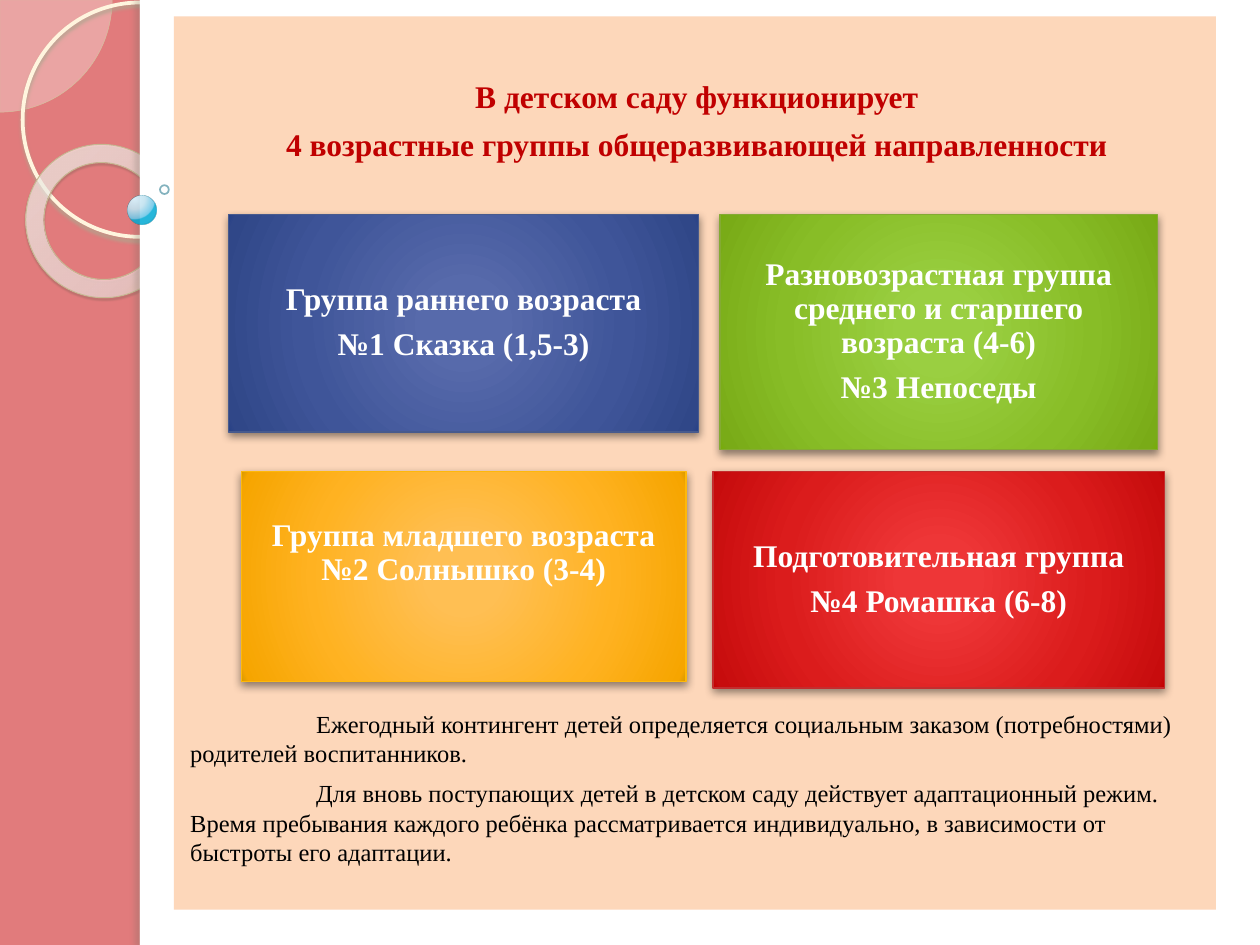
from dataclasses import dataclass

from lxml import etree
from pptx import Presentation
from pptx import util as u
from pptx.dml.color import RGBColor
from pptx.enum import shapes, text
from pptx.oxml.ns import qn

KIND = shapes.MSO_SHAPE


@dataclass(frozen=True)
class Theme:
    font: str = "Times New Roman"
    heading_size: int = 18
    note_size: int = 14
    side: str = "E17B7C"
    page: str = "FFFFFF"
    panel: str = "FDD7BA"
    heading: str = "C00000"
    note: str = "000000"
    card_text: str = "FFFFFF"
    # Gradient stops: position, colour, opacity (all in percent)
    blue: tuple = ((0, "576BAC"), (15, "576AAB"), (62, "3F5599"), (97, "304788"), (100, "264086"))
    green: tuple = ((0, "9AD041"), (15, "9ACF41"), (62, "88BD27"), (97, "79AB17"), (100, "77AC08"))
    amber: tuple = ((0, "FFBF54"), (15, "FFBF53"), (62, "FFB221"), (97, "F6A500"), (100, "D69900"))
    red: tuple = ((0, "EF3737"), (15, "EE3637"), (62, "DB1C1C"), (97, "C70C0D"), (100, "C30001"))
    ring: tuple = ((0, "FFFCF6", 70), (70, "FFFEFB", 55), (100, "F0D28E", 60))
    bubble: tuple = ((0, "DAF4FF", 95), (50, "C3E3F0", 90), (95, "6BC7E8", 88), (100, "00ABD5", 85))
    # Shadows: colour, opacity, blur, distance, direction
    card_shadow: tuple = ("000000", 43, 5, 2, 90)
    circle_shadow: tuple = ("B0A68F", 85, 2, 2, 90)
    ring_shadow: tuple = ("5A5444", 35, 1, 1.2, 75)
    edge_shadow: tuple = ("736F63", 25, 3, 3, 180)


THEME = Theme()
WIDTH, HEIGHT = 10, 7.5
PAGE_LEFT = 1.11
COLUMN_CENTRES = (3.68, 7.45)
ROW_TOPS = (1.7, 3.74)


def add_color(parent, rgb, opacity=100):
    color = etree.SubElement(parent, qn("a:srgbClr"), val=rgb)
    if opacity < 100:
        etree.SubElement(color, qn("a:alpha"), val=str(opacity * 1000))


def fill_radial(shape, stops, focus):
    """Circular gradient; focus is left, top, right, bottom in percent."""
    shape.fill.background()
    props = shape._element.spPr
    gradient = etree.Element(qn("a:gradFill"), rotWithShape="1")
    stop_list = etree.SubElement(gradient, qn("a:gsLst"))
    for position, *color in stops:
        stop = etree.SubElement(stop_list, qn("a:gs"), pos=str(position * 1000))
        add_color(stop, *color)
    circle = etree.SubElement(gradient, qn("a:path"), path="circle")
    sides = {side: str(share * 1000) for side, share in zip("ltrb", focus)}
    etree.SubElement(circle, qn("a:fillToRect"), **sides)
    props.replace(props.find(qn("a:noFill")), gradient)


def add_shadow(shape, rgb, opacity, blur, distance, direction):
    effects = shape._element.spPr.find(qn("a:effectLst"))
    outer = etree.SubElement(
        effects, qn("a:outerShdw"), blurRad=str(u.Pt(blur)), dist=str(u.Pt(distance)),
        dir=str(direction * 60000), algn="tl", rotWithShape="0")
    add_color(outer, rgb, opacity)


def set_opacity(fill_parent, opacity):
    color = fill_parent.find(qn("a:solidFill")).find(qn("a:srgbClr"))
    etree.SubElement(color, qn("a:alpha"), val=str(opacity * 1000))


def add_figure(slide, kind, box, fill=None, focus=(50, 50, 50, 50), opacity=100,
               line=None, line_opacity=100, shadow=None):
    """Preset shape; fill is a colour or gradient stops, line is (colour, points)."""
    shape = slide.shapes.add_shape(kind, *(u.Inches(length) for length in box))
    shape.shadow.inherit = False
    if fill is None:
        shape.fill.background()
    elif isinstance(fill, str):
        shape.fill.solid()
        shape.fill.fore_color.rgb = RGBColor.from_string(fill)
        if opacity < 100:
            set_opacity(shape._element.spPr, opacity)
    else:
        fill_radial(shape, fill, focus)
    if line:
        shape.line.color.rgb = RGBColor.from_string(line[0])
        shape.line.width = u.Pt(line[1])
        if line_opacity < 100:
            set_opacity(shape._element.spPr.find(qn("a:ln")), line_opacity)
    else:
        shape.line.fill.background()
    if shadow:
        add_shadow(shape, *shadow)
    return shape


def set_insets(frame, left, top, right, bottom):
    frame.margin_left, frame.margin_top = u.Inches(left), u.Inches(top)
    frame.margin_right, frame.margin_bottom = u.Inches(right), u.Inches(bottom)
    frame.word_wrap = True


def style_paragraph(paragraph, size, rgb, bold, align):
    paragraph.alignment = align
    for run in paragraph.runs:
        run.font.name, run.font.size, run.font.bold = THEME.font, u.Pt(size), bold
        run.font.color.rgb = RGBColor.from_string(rgb)


def add_side_decoration(slide):
    # Quarter disc and rings, partly covered by the white page
    radius = 0.89
    disc = add_figure(slide, KIND.PIE, (-radius, -radius, 2 * radius, 2 * radius),
                      "FEFAF4", opacity=33, line=("D3C39F", 0.25))
    disc.adjustments[0], disc.adjustments[1] = 0, 54.02
    add_figure(slide, KIND.OVAL, (0.18, 0.02, 1.86, 1.86), line=("FFF5DE", 2.15),
               shadow=THEME.circle_shadow)
    ring = add_figure(slide, KIND.DONUT, (0.2, 1.15, 1.23, 1.21), THEME.ring,
                      (-408, -50, 508, 150), line=("C7B893", 0.58), shadow=THEME.ring_shadow)
    ring.adjustments[0] = 0.12
    ring.rotation = 38.6

    # White page with its shaded left edge
    add_figure(slide, KIND.RECTANGLE, (PAGE_LEFT, 0, WIDTH - PAGE_LEFT, HEIGHT), THEME.page)
    add_figure(slide, KIND.RECTANGLE, (PAGE_LEFT, 0, 0.08, HEIGHT), THEME.page,
               shadow=THEME.edge_shadow)

    # Bubbles on the edge
    add_figure(slide, KIND.OVAL, (1.01, 1.55, 0.23, 0.23), THEME.bubble, (25, 12, 75, 88),
               line=("308EA5", 0.16), line_opacity=60)
    add_figure(slide, KIND.OVAL, (1.27, 1.47, 0.07, 0.07), line=("318093", 1), line_opacity=60)


def add_panel(slide, headings, notes):
    """Panel with a heading above the cards and notes below them."""
    panel = add_figure(slide, KIND.RECTANGLE, (1.38, 0.13, 8.27, 7.09), THEME.panel)
    frame = panel.text_frame
    set_insets(frame, 0.13, 0.48, 0.1, 0.05)
    frame.vertical_anchor = text.MSO_ANCHOR.TOP
    frame.text = "\n".join(headings + notes)
    for index, paragraph in enumerate(frame.paragraphs):
        paragraph.space_before = u.Pt(6 if index else 0)
        if index < len(headings):
            style_paragraph(paragraph, THEME.heading_size, THEME.heading, True, text.PP_ALIGN.CENTER)
        else:
            style_paragraph(paragraph, THEME.note_size, THEME.note, False, text.PP_ALIGN.LEFT)
            paragraph._p.get_or_add_pPr().set("indent", str(u.Inches(1)))
    # Room for the cards
    frame.paragraphs[len(headings)].space_before = u.Pt(312)


def add_card(slide, column, row, size, stops, line, lines, bottom_inset=0.07):
    width, height = size
    left = COLUMN_CENTRES[column] - width / 2
    card = add_figure(slide, KIND.RECTANGLE, (left, ROW_TOPS[row], width, height), stops,
                      line=(line, 0.75), shadow=THEME.card_shadow)
    frame = card.text_frame
    set_insets(frame, 0.07, 0.07, 0.07, bottom_inset)
    frame.vertical_anchor = text.MSO_ANCHOR.MIDDLE
    frame.text = "\n".join(lines)
    for paragraph in frame.paragraphs:
        paragraph.line_spacing, paragraph.space_after = 0.9, u.Pt(6.3)
        style_paragraph(paragraph, THEME.heading_size, THEME.card_text, True, text.PP_ALIGN.CENTER)


def main():
    deck = Presentation()
    deck.slide_width, deck.slide_height = u.Inches(WIDTH), u.Inches(HEIGHT)
    slide = deck.slides.add_slide(deck.slide_layouts[6])
    slide.background.fill.solid()
    slide.background.fill.fore_color.rgb = RGBColor.from_string(THEME.side)

    add_side_decoration(slide)
    add_panel(
        slide,
        ["В детском саду функционирует", "4 возрастные группы общеразвивающей направленности"],
        ["Ежегодный контингент детей определяется социальным заказом (потребностями) "
         "родителей воспитанников.",
         "Для вновь поступающих детей в детском саду действует адаптационный режим. "
         "Время пребывания каждого ребёнка рассматривается индивидуально, в зависимости "
         "от быстроты его адаптации."])

    # Age groups
    add_card(slide, 0, 0, (3.73, 1.73), THEME.blue, "475A8D",
             ["Группа раннего возраста", "№1 Сказка (1,5-3)"])
    add_card(slide, 1, 0, (3.47, 1.87), THEME.green, "84AA33",
             ["Разновозрастная группа среднего и старшего возраста (4-6)", "№3 Непоседы"])
    add_card(slide, 0, 1, (3.53, 1.67), THEME.amber, "FEB80A",
             ["Группа младшего возраста №2 Солнышко (3-4)"], bottom_inset=0.43)
    add_card(slide, 1, 1, (3.58, 1.72), THEME.red, "C32D2E",
             ["Подготовительная группа", "№4 Ромашка (6-8)"])
    deck.save("out.pptx")


if __name__ == "__main__":
    main()
